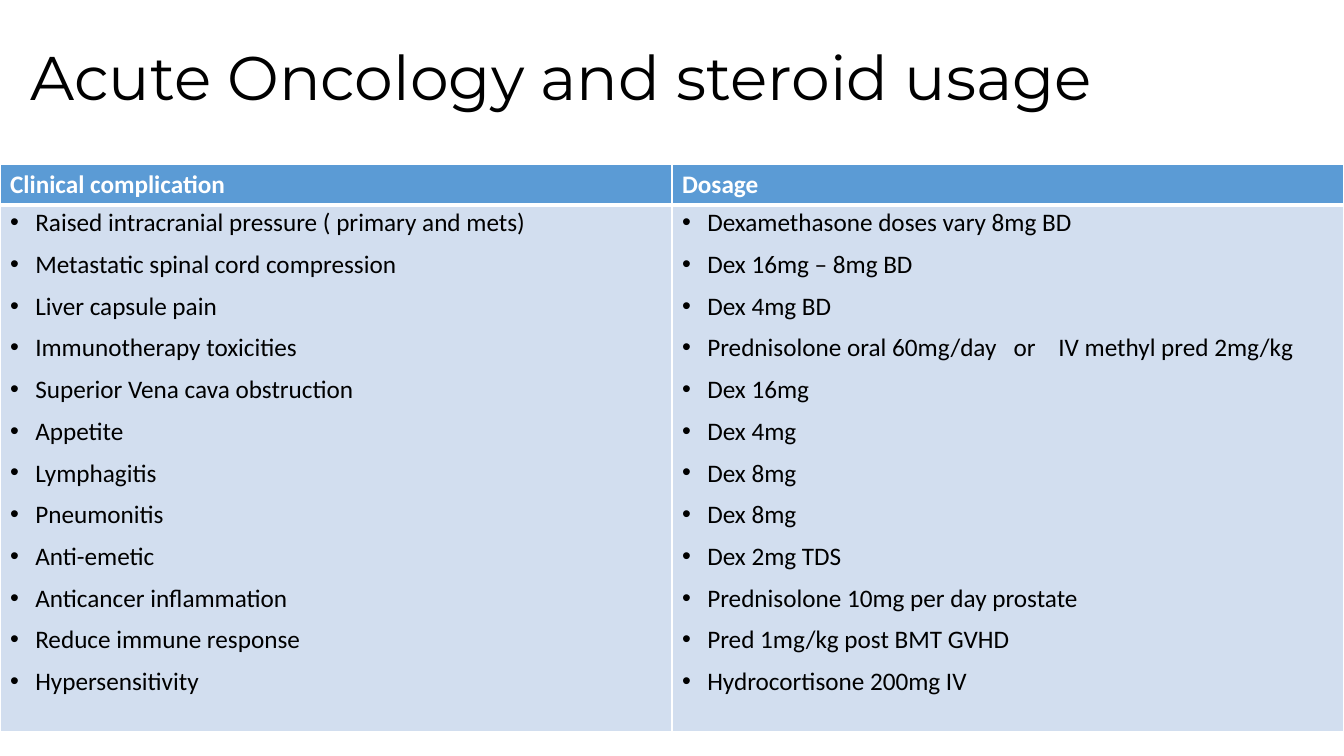
import pptx
import pptx.dml.color
import pptx.enum.text
import pptx.oxml.ns
import pptx.util
from lxml import etree

Inches = pptx.util.Inches
Pt = pptx.util.Pt
RGBColor = pptx.dml.color.RGBColor
qn = pptx.oxml.ns.qn

BLACK = RGBColor(0x00, 0x00, 0x00)
WHITE = RGBColor(0xFF, 0xFF, 0xFF)
HEADER_BLUE = RGBColor(0x5B, 0x9B, 0xD5)
BODY_BLUE = RGBColor(0xD2, 0xDE, 0xEF)

HEADERS = ["Clinical complication", "Dosage"]
TREATMENTS = [
    ("Raised intracranial pressure ( primary and mets)", "Dexamethasone doses vary 8mg BD"),
    ("Metastatic spinal cord compression", "Dex 16mg – 8mg BD"),
    ("Liver capsule pain", "Dex 4mg BD"),
    ("Immunotherapy toxicities", "Prednisolone oral 60mg/day   or    IV methyl pred 2mg/kg"),
    ("Superior Vena cava obstruction", "Dex 16mg"),
    ("Appetite", "Dex 4mg"),
    ("Lymphagitis", "Dex 8mg"),
    ("Pneumonitis", "Dex 8mg"),
    ("Anti-emetic", "Dex 2mg TDS"),
    ("Anticancer inflammation", "Prednisolone 10mg per day prostate"),
    ("Reduce immune response", "Pred 1mg/kg post BMT GVHD"),
    ("Hypersensitivity", "Hydrocortisone 200mg IV"),
]


class SlideBuilder:
    """Holds the style and the current page."""

    title_font, body_font = "Montserrat", "Calibri"
    title_size, body_size = Pt(44), Pt(18)
    line_spacing = 0.9

    def __init__(self, page):
        self.page = page

    def style(self, para, font, size, color, bold=False):
        for span in para.runs:
            span.font.name = font
            span.font.size = size
            span.font.bold = bold
            span.font.color.rgb = color

    def title(self, text, left, top, width, height):
        box = self.page.shapes.add_textbox(left, top, width, height)
        frame = box.text_frame
        frame.word_wrap = True
        frame.vertical_anchor = pptx.enum.text.MSO_ANCHOR.MIDDLE
        frame.text = text
        para = frame.paragraphs[0]
        para.line_spacing = self.line_spacing
        self.style(para, self.title_font, self.title_size, BLACK)

    def bullet(self, para):
        para.line_spacing = self.line_spacing
        para.space_before = Pt(10)
        properties = para._p.get_or_add_pPr()
        properties.set("marL", str(Inches(0.25)))
        properties.set("indent", str(-Inches(0.25)))
        etree.SubElement(properties, qn("a:buFont")).set("typeface", "Arial")
        etree.SubElement(properties, qn("a:buChar")).set("char", "•")

    def cell(self, cell, lines, fill, color, bottom=1, bold=False, bullets=False):
        # White borders, left, right, top and bottom
        properties = cell._tc.get_or_add_tcPr()
        for side, points in (("L", 1), ("R", 1), ("T", 1), ("B", bottom)):
            border = etree.SubElement(properties, qn(f"a:ln{side}"), w=str(Pt(points)))
            solid = etree.SubElement(border, qn("a:solidFill"))
            etree.SubElement(solid, qn("a:srgbClr")).set("val", str(WHITE))
        cell.fill.solid()
        cell.fill.fore_color.rgb = fill

        cell.text_frame.text = "\n".join(lines)
        for para in cell.text_frame.paragraphs:
            if bullets:
                self.bullet(para)
            self.style(para, self.body_font, self.body_size, color, bold)

    def table(self, headers, rows, left, top, width, heights):
        frame = self.page.shapes.add_table(
            len(heights), len(headers), left, top, width, sum(heights))
        table = frame.table
        for row, height in zip(table.rows, heights):
            row.height = height
        for index, (header, lines) in enumerate(zip(headers, zip(*rows))):
            self.cell(table.cell(0, index), [header], HEADER_BLUE, WHITE, bottom=3, bold=True)
            # The heavy rule under the header belongs to both rows
            self.cell(table.cell(1, index), lines, BODY_BLUE, BLACK, bullets=True)
            rule = table.cell(1, index)._tc.tcPr.find(qn("a:lnT"))
            rule.set("w", str(Pt(3)))


def main():
    deck = pptx.Presentation()
    deck.slide_width = Inches(13.33)
    deck.slide_height = Inches(7.5)
    builder = SlideBuilder(deck.slides.add_slide(deck.slide_layouts[6]))

    # Title
    builder.title("Acute Oncology and steroid usage",
                  Inches(0.2), Inches(0.11), Inches(12.22), Inches(1.37))

    # Complications and their doses
    builder.table(HEADERS, TREATMENTS, Inches(0), Inches(1.63), deck.slide_width,
                  [Inches(0.38), Inches(5.23)])

    deck.save("out.pptx")


if __name__ == "__main__":
    main()
